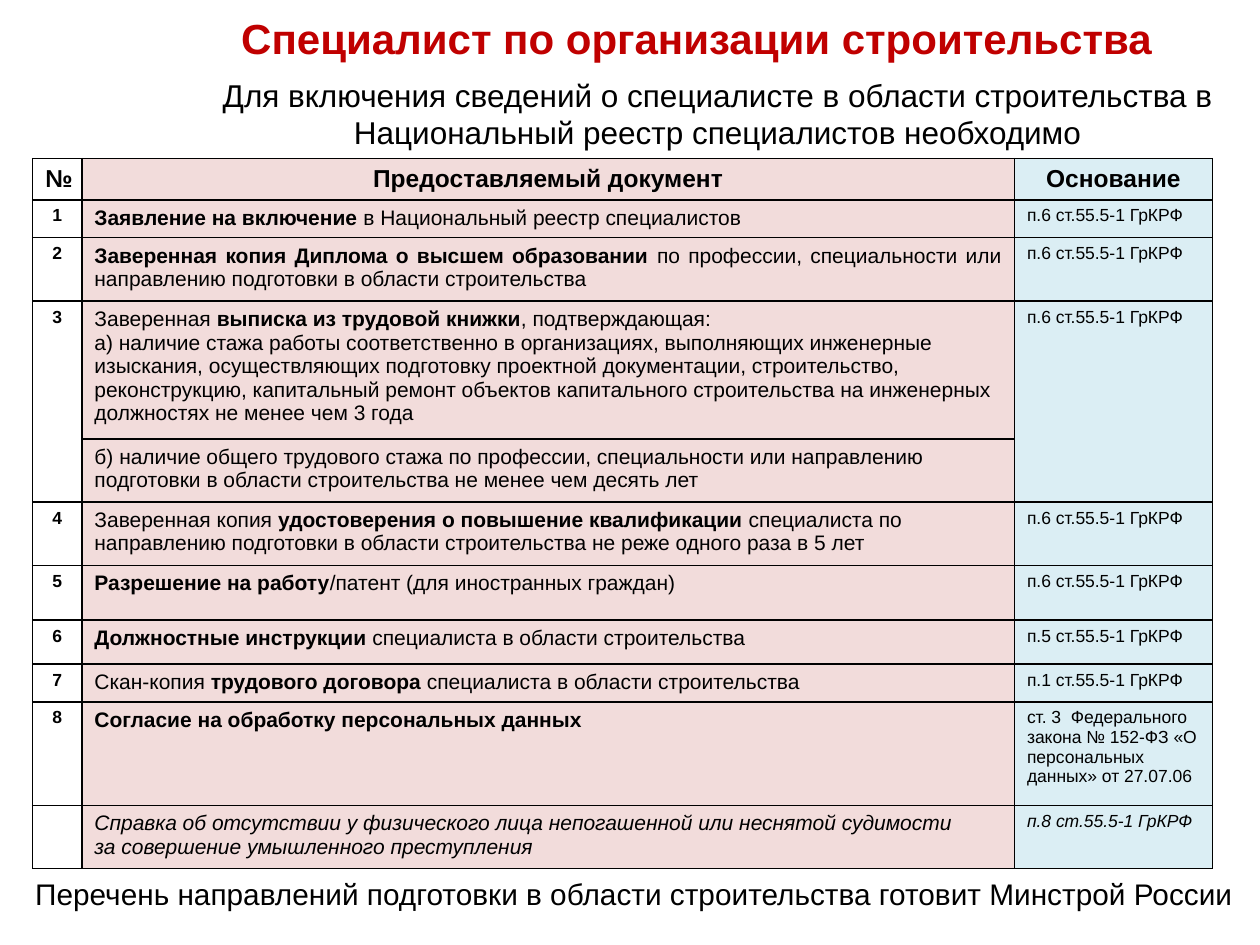
from lxml import etree
from pptx import Presentation
from pptx.dml.color import RGBColor
from pptx.enum.text import MSO_ANCHOR, MSO_AUTO_SIZE, PP_ALIGN
from pptx.oxml.ns import qn
from pptx.util import Cm, Pt

LEFT, CENTER, JUSTIFY = PP_ALIGN.LEFT, PP_ALIGN.CENTER, PP_ALIGN.JUSTIFY
TOP = MSO_ANCHOR.TOP
NO_FIT = MSO_AUTO_SIZE.NONE
FONT = "Arial"
BLACK, RED = "000000", "C00000"
FILLS = ["FFFFFF", "F2DCDB", "DBEEF4"]

TITLE = "Специалист по организации строительства"
SUBTITLE = ("Для включения сведений о специалисте в области строительства "
            "в Национальный реестр специалистов необходимо")
FOOTER = "Перечень направлений подготовки в области строительства готовит Минстрой России"
HEADERS = ["№", "Предоставляемый документ", "Основание"]
BASIS = "п.6 ст.55.5-1 ГрКРФ"

# number, paragraphs of (text, style) runs, basis, row height in cm
ROWS = [
    ("1", [[("Заявление на включение ", "b"),
            ("в Национальный реестр специалистов", "")]], BASIS, 0.76),
    ("2", [[("Заверенная копия Диплома о высшем образовании ", "b"),
            ("по профессии, специальности или направлению подготовки "
             "в области строительства", "")]], BASIS, 1.28),
    ("3", [[("Заверенная ", ""), ("выписка из трудовой книжки", "b"),
            (", подтверждающая:", "")],
           [("а) наличие стажа работы соответственно в организациях, выполняющих "
             "инженерные изыскания, осуществляющих подготовку проектной документации, "
             "строительство, реконструкцию, капитальный ремонт объектов капитального "
             "строительства на инженерных должностях не менее чем 3 года", "")]],
     BASIS, 2.78),
    ("", [[("б) наличие общего трудового стажа по профессии, специальности или "
            "направлению подготовки в области строительства не менее чем десять лет",
            "")]], "", 1.27),
    ("4", [[("Заверенная копия ", ""),
            ("удостоверения о повышение квалификации ", "b"),
            ("специалиста по направлению подготовки в области строительства "
             "не реже одного раза в 5 лет", "")]], BASIS, 1.28),
    ("5", [[("Разрешение на работу", "b"),
            ("/патент (для иностранных граждан)", "")]], BASIS, 1.1),
    ("6", [[("Должностные инструкции ", "b"),
            ("специалиста в области строительства", "")]], "п.5 ст.55.5-1 ГрКРФ", 0.89),
    ("7", [[("Скан-копия ", ""), ("трудового договора ", "b"),
            ("специалиста в области строительства", "")]], "п.1 ст.55.5-1 ГрКРФ", 0.76),
    ("8", [[("Согласие на обработку персональных данных", "b")]],
     "ст. 3  Федерального закона № 152-ФЗ «О персональных данных» от 27.07.06", 2.09),
    ("", [[("Справка об отсутствии у физического лица непогашенной или неснятой "
            "судимости за\u00a0совершение умышленного преступления", "i")]],
     "п.8 ст.55.5-1 ГрКРФ", 1.27),
]
HEADER_H = 0.83
COLS = [0.99, 18.8, 3.99]
JUSTIFIED = "2"
MERGED_ROW = 3


def rgb(value):
    return RGBColor.from_string(value)


def write(tf, paragraphs, size, align=LEFT, color=BLACK):
    for i, runs in enumerate(paragraphs):
        p = tf.paragraphs[0] if i == 0 else tf.add_paragraph()
        p.alignment = align
        for text, style in runs:
            r = p.add_run()
            r.text = text
            r.font.name = FONT
            r.font.size = Pt(size)
            r.font.bold = "b" in style
            r.font.italic = "i" in style
            r.font.color.rgb = rgb(color)


def place(sp, left, top, width, height):
    sp.left, sp.top, sp.width, sp.height = Cm(left), Cm(top), Cm(width), Cm(height)
    tf = sp.text_frame
    tf.word_wrap = True
    tf.auto_size = NO_FIT
    tf.vertical_anchor = TOP
    return tf


def add_text(s, box, text, size):
    sp = s.shapes.add_textbox(0, 0, 0, 0)
    write(place(sp, *box), [[(text, "")]], size, CENTER)


def style_cell(cell, fill):
    tcPr = cell._tc.get_or_add_tcPr()
    for side in ("a:lnL", "a:lnR", "a:lnT", "a:lnB"):
        ln = etree.SubElement(tcPr, qn(side), w=str(Pt(1)))
        solid = etree.SubElement(ln, qn("a:solidFill"))
        etree.SubElement(solid, qn("a:srgbClr"), val=BLACK)
    cell.fill.solid()
    cell.fill.fore_color.rgb = rgb(fill)


def add_table(s):
    heights = [HEADER_H] + [row[3] for row in ROWS]
    frame = s.shapes.add_table(len(heights), len(COLS), Cm(0.66), Cm(3.2),
                               Cm(sum(COLS)), Cm(sum(heights)))
    table = frame.table
    table.first_row = table.horz_banding = False
    for col, width in zip(table.columns, COLS):
        col.width = Cm(width)
    for row, height in zip(table.rows, heights):
        row.height = Cm(height)
        for cell, fill in zip(row.cells, FILLS):
            style_cell(cell, fill)
    for c, text in enumerate(HEADERS):
        write(table.cell(0, c).text_frame, [[(text, "b")]], 14, CENTER)
    for i, (number, document, basis, _) in enumerate(ROWS, 1):
        num, doc, ref = (table.cell(i, c).text_frame for c in range(3))
        if number:
            write(num, [[(number, "b")]], 10, CENTER)
        write(doc, document, 12, JUSTIFY if number == JUSTIFIED else LEFT)
        if basis:
            write(ref, [[(basis, "i" if document[0][0][1] == "i" else "")]], 10)
    for c in (0, 2):
        table.cell(MERGED_ROW, c).merge(table.cell(MERGED_ROW + 1, c))


def main():
    prs = Presentation()
    prs.slide_width, prs.slide_height = Cm(25.4), Cm(19.05)
    s = prs.slides.add_slide(prs.slide_layouts[5])
    tf = place(s.shapes.title, 4.14, 0.13, 19.81, 1.27)
    write(tf, [[(TITLE, "b")]], 24, CENTER, RED)
    add_text(s, (2.67, 1.4, 23.6, 2.57), SUBTITLE, 18)
    add_table(s)
    add_text(s, (-0.69, 17.53, 26.95, 0.99), FOOTER, 17)
    prs.save("out.pptx")


if __name__ == "__main__":
    main()
